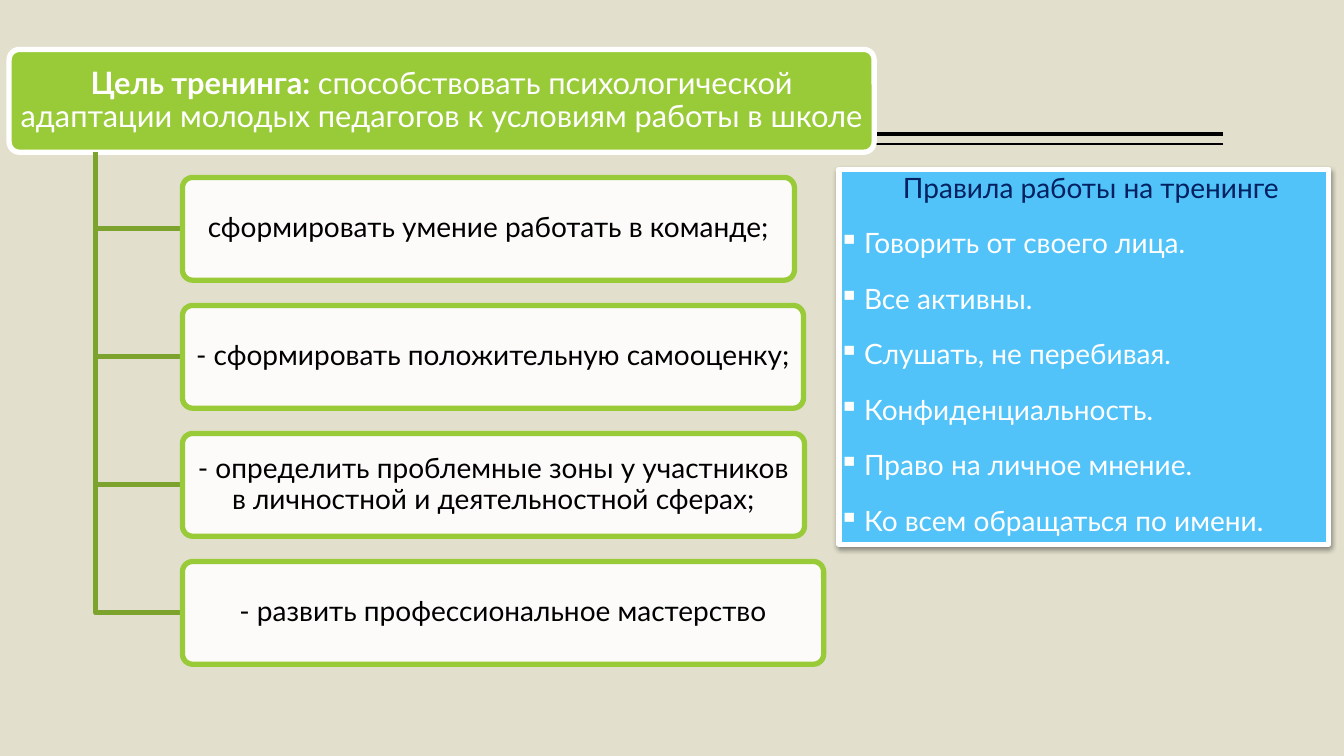
from lxml import etree
from pptx import Presentation
from pptx.dml.color import RGBColor
from pptx.enum.shapes import MSO_CONNECTOR, MSO_SHAPE
from pptx.enum.text import MSO_ANCHOR, PP_ALIGN
from pptx.oxml.ns import qn
from pptx.util import Inches, Pt

STRAIGHT = MSO_CONNECTOR.STRAIGHT
RECT = MSO_SHAPE.RECTANGLE
ROUNDED = MSO_SHAPE.ROUNDED_RECTANGLE
TOP, MIDDLE = MSO_ANCHOR.TOP, MSO_ANCHOR.MIDDLE
CENTER, LEFT = PP_ALIGN.CENTER, PP_ALIGN.LEFT

FONT = "Lato"
WHITE, BLACK, NAVY = "FFFFFF", "000000", "002060"
GREEN, DARK_GREEN, BLUE, BEIGE = "99CB38", "7BA32D", "51C3F9", "E2DFCC"
BORDER = 3.78

GOAL_TOP, BOX_HEIGHT = 0.49, 1.02
TASK_LEFT, TASK_STEP = 1.81, 1.27
TRUNK_X = 0.95
TASKS = [
    ("сформировать умение работать в команде;", 6.07),
    ("- сформировать положительную самооценку;", 6.16),
    ("- определить проблемные зоны у участников в личностной и деятельностной сферах;", 6.17),
    ("- развить профессиональное мастерство", 6.36),
]
RULES_TITLE = "Правила работы на тренинге"
RULES = [
    "Говорить от своего лица.",
    "Все активны.",
    "Слушать, не перебивая.",
    "Конфиденциальность.",
    "Право на личное мнение.",
    "Ко всем обращаться по имени.",
]


def rgb(color):
    return RGBColor.from_string(color)


def add_child(parent, tag, **attrs):
    return etree.SubElement(parent, qn(tag), attrs)


def set_line(sp, color, width):
    sp.line.color.rgb = rgb(color)
    sp.line.width = Pt(width)


def add_rule(slide, y, width):
    line = slide.shapes.add_connector(
        STRAIGHT, Inches(12.13), Inches(y), Inches(1.21), Inches(y))
    set_line(line, BLACK, width)
    add_child(line._element.spPr, "a:effectLst")


def add_box(slide, kind, at, fill, border, width, insets, anchor):
    sp = slide.shapes.add_shape(kind, *(Inches(v) for v in at))
    sp.shadow.inherit = False
    sp.fill.solid()
    sp.fill.fore_color.rgb = rgb(fill)
    set_line(sp, border, width)
    if kind == ROUNDED:
        sp.adjustments[0] = 0.1
    tf = sp.text_frame
    tf.word_wrap = True
    tf.vertical_anchor = anchor
    tf.margin_left = tf.margin_right = Inches(insets[0])
    tf.margin_top = tf.margin_bottom = Inches(insets[1])
    return sp


def add_run(p, text, size, color, bold=False):
    r = p.add_run()
    r.text = text
    r.font.name = FONT
    r.font.size = Pt(size)
    r.font.bold = bold
    r.font.color.rgb = rgb(color)


def format_paragraph(p, align):
    p.alignment = align
    p.line_spacing = 0.9


def set_indent(p, left, first=0):
    pPr = p._p.get_or_add_pPr()
    pPr.set("marL", str(Inches(left)))
    pPr.set("indent", str(Inches(first)))
    return pPr


def add_goal(slide):
    sp = add_box(slide, ROUNDED, (0.09, GOAL_TOP, 8.58, BOX_HEIGHT),
                 GREEN, WHITE, BORDER, (0.05, 0.03), MIDDLE)
    p = sp.text_frame.paragraphs[0]
    format_paragraph(p, CENTER)
    add_run(p, "Цель тренинга: ", 22, WHITE, True)
    add_run(p, "способствовать психологической адаптации молодых педагогов "
               "к условиям работы в школе", 22, WHITE)


def add_branch(slide, y):
    trunk, end = Inches(TRUNK_X), Inches(y)
    builder = slide.shapes.build_freeform(trunk, Inches(GOAL_TOP + BOX_HEIGHT))
    builder.add_line_segments([(trunk, end), (Inches(TASK_LEFT), end)], close=False)
    sp = builder.convert_to_shape()
    sp.shadow.inherit = False
    sp.fill.background()
    set_line(sp, DARK_GREEN, BORDER)


def add_task(slide, text, top, width):
    sp = add_box(slide, ROUNDED, (TASK_LEFT, top, width, BOX_HEIGHT),
                 WHITE, GREEN, BORDER, (0.04, 0.03), MIDDLE)
    color = sp._element.spPr.find(qn("a:solidFill"))[0]
    add_child(color, "a:alpha", val="90000")
    p = sp.text_frame.paragraphs[0]
    format_paragraph(p, CENTER)
    add_run(p, text, 20, BLACK)


def add_shadow(sp):
    effects = sp._element.spPr.find(qn("a:effectLst"))
    shadow = add_child(effects, "a:outerShdw", blurRad=str(Pt(3.5)),
                       dist=str(Pt(2)), dir="5400000", rotWithShape="0")
    color = add_child(shadow, "a:srgbClr", val=BLACK)
    add_child(color, "a:alpha", val="38000")


def add_rules_panel(slide):
    sp = add_box(slide, RECT, (8.32, 1.68, 4.86, 3.72),
                 BLUE, WHITE, 3.82, (0, 0.05), TOP)
    add_shadow(sp)
    tf = sp.text_frame
    p = tf.paragraphs[0]
    format_paragraph(p, CENTER)
    set_indent(p, 0.14)
    add_run(p, RULES_TITLE, 20, NAVY)
    for rule in RULES:
        p = tf.add_paragraph()
        format_paragraph(p, LEFT)
        p.space_before = Pt(18)
        add_child(set_indent(p, 0.25, -0.25), "a:buChar", char="▪")
        add_run(p, rule, 20, WHITE)


def main():
    prs = Presentation()
    prs.slide_width, prs.slide_height = Inches(13.33), Inches(7.5)
    slide = prs.slides.add_slide(prs.slide_layouts[6])
    slide.background.fill.solid()
    slide.background.fill.fore_color.rgb = rgb(BEIGE)
    add_rule(slide, 1.33, 3)
    add_rule(slide, 1.43, 1)
    add_goal(slide)
    for i, (text, width) in enumerate(TASKS):
        top = GOAL_TOP + (i + 1) * TASK_STEP
        add_branch(slide, top + BOX_HEIGHT / 2)
        add_task(slide, text, top, width)
    add_rules_panel(slide)
    prs.save("out.pptx")


if __name__ == "__main__":
    main()
